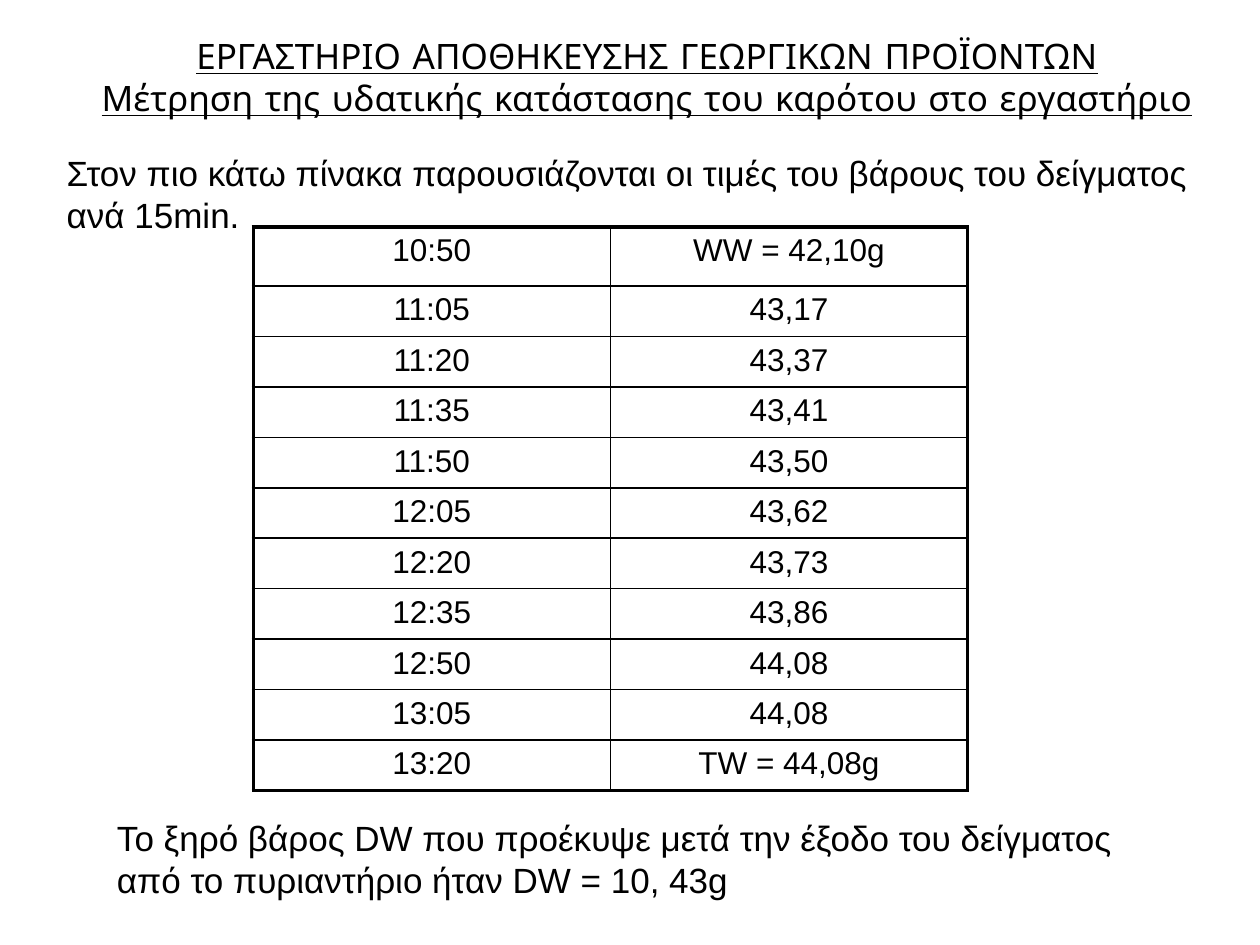
from lxml.etree import SubElement
from pptx import Presentation
from pptx.dml.color import RGBColor
from pptx.enum.text import MSO_ANCHOR as Anchor, PP_ALIGN as Align
from pptx.oxml.ns import qn
from pptx.util import Inches, Pt

TITLE = (
    "ΕΡΓΑΣΤΗΡΙΟ ΑΠΟΘΗΚΕΥΣΗΣ ΓΕΩΡΓΙΚΩΝ ΠΡΟΪΟΝΤΩΝ\v"
    "Μέτρηση της υδατικής κατάστασης του καρότου στο εργαστήριο"
)
INTRO = "Στον πιο κάτω πίνακα παρουσιάζονται οι τιμές του βάρους του δείγματος ανά 15min."
RESULT = (
    "Το ξηρό βάρος DW που προέκυψε μετά την έξοδο του δείγματος "
    "από το πυριαντήριο ήταν DW = 10, 43g"
)
WEIGHTS = [
    ("10:50", "WW = 42,10g"),
    ("11:05", "43,17"),
    ("11:20", "43,37"),
    ("11:35", "43,41"),
    ("11:50", "43,50"),
    ("12:05", "43,62"),
    ("12:20", "43,73"),
    ("12:35", "43,86"),
    ("12:50", "44,08"),
    ("13:05", "44,08"),
    ("13:20", "TW = 44,08g"),
]


def color(value):
    return RGBColor.from_string(value)


def write(frame, text, font="Arial", size=20, ink="000000", align=Align.LEFT, underline=None):
    para = frame.paragraphs[0]
    para.text = text
    para.alignment = align
    for span in para.runs:
        span.font.name = font
        span.font.size = Pt(size)
        span.font.underline = underline
        span.font.color.rgb = color(ink)


class SlideBuilder:
    """Holds the line style and the current slide, and adds its elements."""

    ink = "000000"
    thin = 1
    thick = 2.25

    def __init__(self, page):
        self.page = page

    def text(self, text, left, top, width, height, anchor=Anchor.TOP, **style):
        box = self.page.shapes.add_textbox(
            Inches(left), Inches(top), Inches(width), Inches(height)
        )
        box.text_frame.word_wrap = True
        box.text_frame.vertical_anchor = anchor
        write(box.text_frame, text, ink=self.ink, **style)

    def border(self, cell, side, points):
        properties = cell._tc.get_or_add_tcPr()
        line = SubElement(properties, qn(f"a:{side}"), w=str(Pt(points)))
        fill = SubElement(line, qn("a:solidFill"))
        SubElement(fill, qn("a:srgbClr"), val=self.ink)

    def table(self, rows, left, top, width, first_height, row_height):
        last_row, last_column = len(rows) - 1, len(rows[0]) - 1
        height = first_height + last_row * row_height
        table = self.page.shapes.add_table(
            len(rows), len(rows[0]), Inches(left), Inches(top), Inches(width), Inches(height)
        ).table
        table.first_row = table.horz_banding = False
        for r, values in enumerate(rows):
            table.rows[r].height = Inches(row_height if r else first_height)
            for c, value in enumerate(values):
                cell = table.cell(r, c)
                write(cell.text_frame, value, size=18, ink=self.ink, align=Align.CENTER)
                outer = {"lnL": c == 0, "lnR": c == last_column, "lnT": r == 0, "lnB": r == last_row}
                for side, is_outer in outer.items():
                    self.border(cell, side, self.thick if is_outer else self.thin)
                cell.fill.background()


def main():
    deck = Presentation()
    deck.slide_width, deck.slide_height = Inches(10), Inches(7.5)
    builder = SlideBuilder(deck.slides.add_slide(deck.slide_layouts[6]))
    builder.text(
        TITLE, 0.27, 0.21, 9.73, 0.79, anchor=Anchor.MIDDLE,
        font="Comic Neue", align=Align.CENTER, underline=True,
    )
    builder.table(WEIGHTS, 2.01, 1.8, 5.67, first_height=0.47, row_height=0.4)
    builder.text(RESULT, 0.83, 6.43, 8.43, 0.77)
    builder.text(INTRO, 0.43, 1.15, 9.29, 0.77)
    deck.save("out.pptx")


if __name__ == "__main__":
    main()
